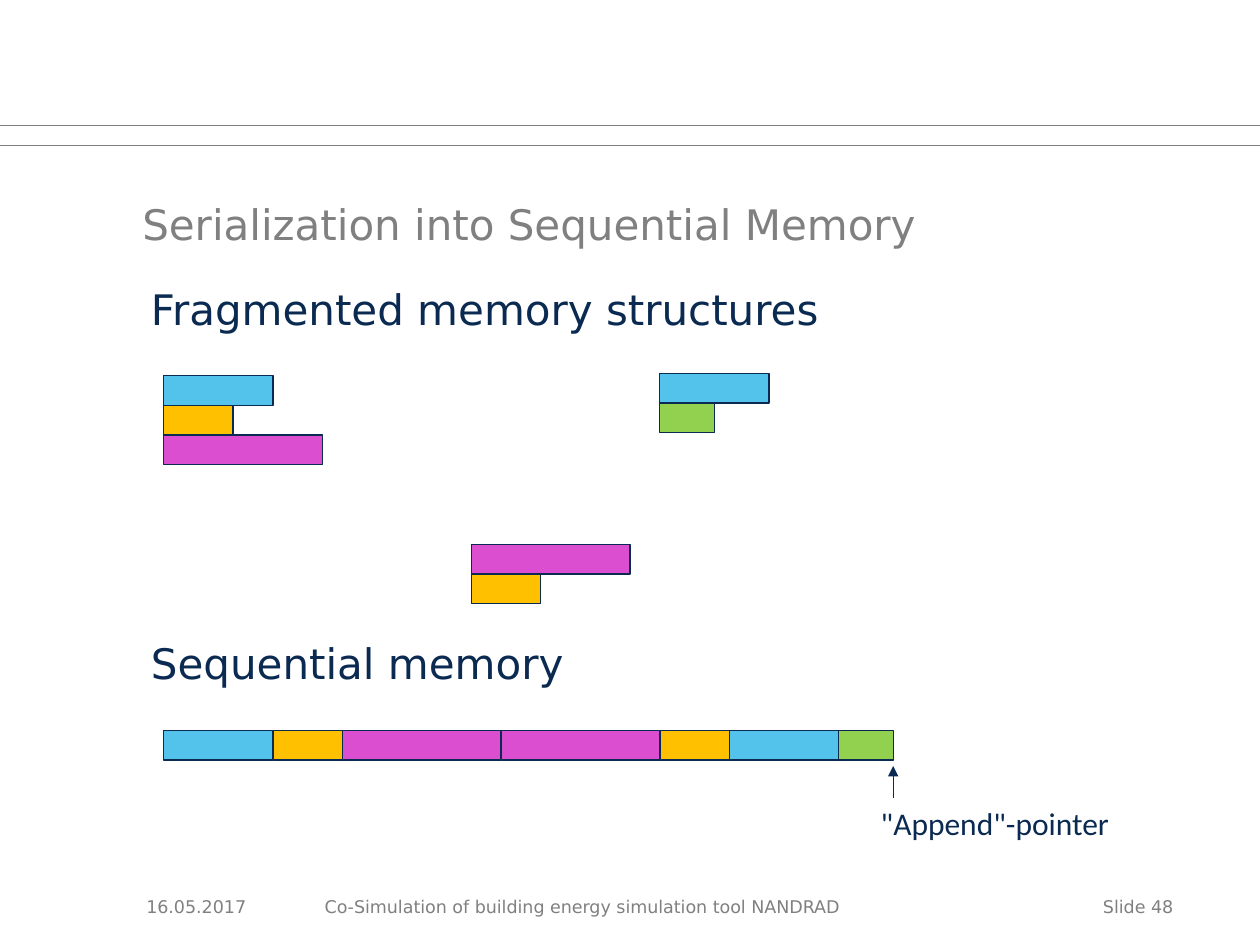
from dataclasses import dataclass

from lxml import etree
from pptx import Presentation
from pptx.dml.color import RGBColor
from pptx.enum.shapes import MSO_CONNECTOR, MSO_SHAPE
from pptx.enum.text import MSO_ANCHOR, PP_ALIGN
from pptx.oxml.ns import qn
from pptx.util import Pt

STRAIGHT = MSO_CONNECTOR.STRAIGHT
RECTANGLE = MSO_SHAPE.RECTANGLE
TOP, MIDDLE = MSO_ANCHOR.TOP, MSO_ANCHOR.MIDDLE
LEFT, RIGHT = PP_ALIGN.LEFT, PP_ALIGN.RIGHT


@dataclass(frozen=True)
class Theme:
    navy: str = "0B2A51"
    gray: str = "808080"
    blue: str = "54C3EC"
    amber: str = "FFC000"
    magenta: str = "DB4ECF"
    green: str = "92D050"
    font: str = "DejaVu Sans"
    label_font: str = "Calibri"
    heading_size: int = 24
    label_size: int = 18
    footer_size: int = 10
    rule_width: float = 0.5
    outline_width: float = 0.75


class SlideBuilder:
    def __init__(self, slide, theme):
        self.slide = slide
        self.theme = theme

    def text(self, wording, left, top, width, height, size, color,
             font=None, align=LEFT, anchor=TOP, wrap=True):
        box = self.slide.shapes.add_textbox(Pt(left), Pt(top), Pt(width), Pt(height))
        frame = box.text_frame
        frame.text = wording
        frame.word_wrap = wrap
        frame.vertical_anchor = anchor
        paragraph = frame.paragraphs[0]
        paragraph.alignment = align
        run_font = paragraph.runs[0].font
        run_font.name = font or self.theme.font
        run_font.size = Pt(size)
        run_font.color.rgb = RGBColor.from_string(color)

    def line(self, x1, y1, x2, y2, color, width, arrow=False):
        connector = self.slide.shapes.add_connector(STRAIGHT, Pt(x1), Pt(y1), Pt(x2), Pt(y2))
        connector.line.color.rgb = RGBColor.from_string(color)
        connector.line.width = Pt(width)
        if arrow:
            outline = connector.line._get_or_add_ln()
            etree.SubElement(outline, qn("a:tailEnd"), type="triangle")
        etree.SubElement(connector._element.spPr, qn("a:effectLst"))

    def block(self, left, top, width, height, color):
        shape = self.slide.shapes.add_shape(RECTANGLE, Pt(left), Pt(top), Pt(width), Pt(height))
        shape.shadow.inherit = False
        shape.fill.solid()
        shape.fill.fore_color.rgb = RGBColor.from_string(color)
        shape.line.color.rgb = RGBColor.from_string(self.theme.navy)
        shape.line.width = Pt(self.theme.outline_width)


def main():
    theme = Theme()
    presentation = Presentation()
    presentation.slide_width, presentation.slide_height = Pt(720), Pt(540)
    builder = SlideBuilder(presentation.slides.add_slide(presentation.slide_layouts[6]), theme)

    for rule_y in (71.5, 83):
        builder.line(0, rule_y, 720, rule_y, theme.gray, theme.rule_width)

    builder.text("Serialization into Sequential Memory", 74.2, 83, 598.3, 90,
                 theme.heading_size, theme.gray, anchor=MIDDLE)

    for heading, heading_y in (("Fragmented memory structures", 158.4),
                               ("Sequential memory", 360.7)):
        builder.text(heading, 79.2, heading_y, 518.4, 36, theme.heading_size, theme.navy)

    block_height = 17
    block_widths = {theme.blue: 62.5, theme.amber: 39.6, theme.magenta: 90.7, theme.green: 31.2}
    fragments = (
        (93.6, 214.6, (theme.blue, theme.amber, theme.magenta)),
        (269.3, 311, (theme.magenta, theme.amber)),
        (377, 213.3, (theme.blue, theme.green)),
    )
    for left, top, colors in fragments:
        for row, color in enumerate(colors):
            builder.block(left, top + row * block_height, block_widths[color], block_height, color)

    append_x, sequence_y = 93.6, 417.4
    sequence = (theme.blue, theme.amber, theme.magenta, theme.magenta,
                theme.amber, theme.blue, theme.green)
    for color in sequence:
        builder.block(append_x, sequence_y, block_widths[color], block_height, color)
        append_x += block_widths[color]

    builder.line(append_x, 456, append_x, 437.7, theme.navy, theme.outline_width, arrow=True)
    builder.text('"Append"-pointer', 496.2, 456, 146.9, 29, theme.label_size, theme.navy,
                 font=theme.label_font, wrap=False)

    builder.text("16.05.2017", 76.5, 503.5, 80.6, 28.8,
                 theme.footer_size, theme.gray, anchor=MIDDLE)
    builder.text("Co-Simulation of building energy simulation tool NANDRAD",
                 178.4, 508.2, 430.6, 19.4, theme.footer_size, theme.gray)
    builder.text("Slide 48", 541.4, 508.2, 136.1, 19.4,
                 theme.footer_size, theme.gray, align=RIGHT)

    presentation.save("out.pptx")


if __name__ == "__main__":
    main()
